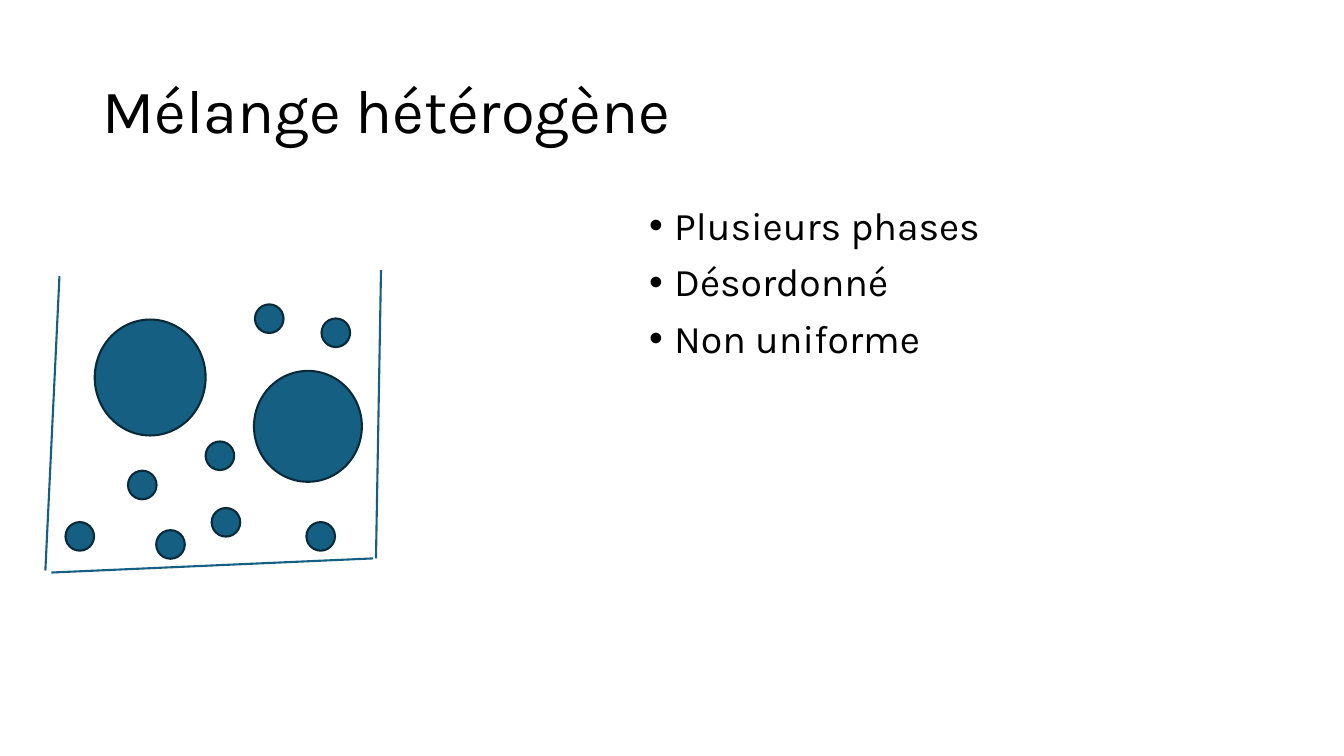
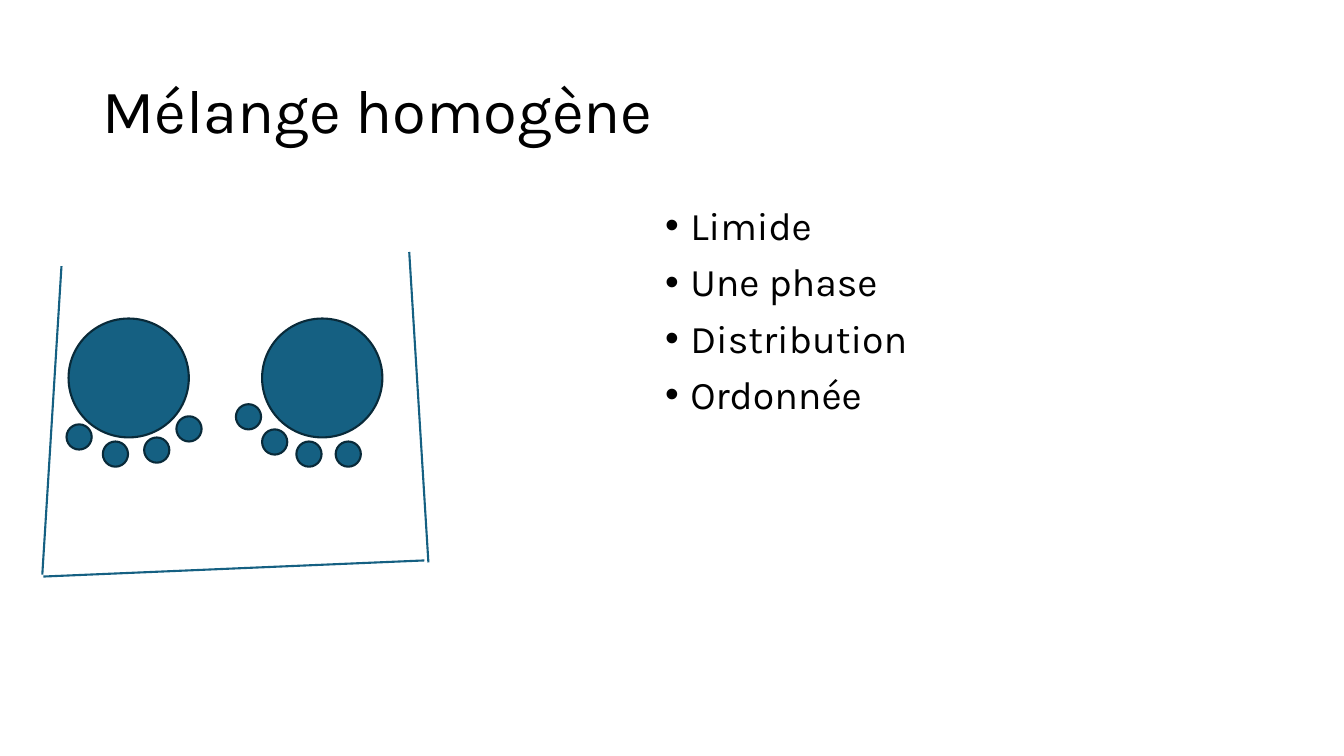
from lxml import etree
from pptx import Presentation
from pptx.dml.color import RGBColor
from pptx.enum.shapes import MSO_CONNECTOR, MSO_SHAPE
from pptx.enum.text import MSO_ANCHOR, MSO_AUTO_SIZE, PP_ALIGN
from pptx.oxml.ns import qn
from pptx.util import Inches, Pt

STRAIGHT = MSO_CONNECTOR.STRAIGHT
CIRCLE = MSO_SHAPE.FLOWCHART_CONNECTOR
LEFT = PP_ALIGN.LEFT
TOP, MIDDLE = MSO_ANCHOR.TOP, MSO_ANCHOR.MIDDLE
NO_AUTOFIT = MSO_AUTO_SIZE.NONE

# Grid of square cells, three to the inch
COLUMNS, ROWS = 40, 22.5
CELL = Inches(1) / 3
TITLE_ONLY = 5


def cells(count):
    return round(count * CELL)


def color(hex_value):
    return RGBColor.from_string(hex_value)


class Deck:
    """Shared style and the slide being filled."""

    font = "Karla"
    text_color = "000000"
    blue = "156082"
    outline = "092A39"
    line_width = Pt(1.5)
    title_area = (2.75, 1.2, 34.5, 4.35)
    body_top, body_right, body_height = 6, 37.25, 14.28

    def __init__(self):
        self.presentation = Presentation()
        self.presentation.slide_width = cells(COLUMNS)
        self.presentation.slide_height = cells(ROWS)
        self.slide = None

    def add_slide(self, title):
        layout = self.presentation.slide_layouts[TITLE_ONLY]
        self.slide = self.presentation.slides.add_slide(layout)
        shape = self.slide.shapes.title
        shape.left, shape.top, shape.width, shape.height = map(cells, self.title_area)
        frame = self.prepare_frame(shape, MIDDLE)
        self.add_text(frame.paragraphs[0], title, 44)

    def prepare_frame(self, shape, anchor):
        frame = shape.text_frame
        frame.word_wrap = True
        frame.auto_size = NO_AUTOFIT
        frame.vertical_anchor = anchor
        return frame

    def add_text(self, paragraph, text, size):
        paragraph.alignment = LEFT
        paragraph.line_spacing = 0.9
        run = paragraph.add_run()
        run.text = text
        run.font.name = self.font
        run.font.size = Pt(size)
        run.font.color.rgb = color(self.text_color)

    def add_bullets(self, left, items):
        area = (left, self.body_top, self.body_right - left, self.body_height)
        box = self.slide.shapes.add_textbox(*map(cells, area))
        frame = self.prepare_frame(box, TOP)
        for index, item in enumerate(items):
            paragraph = frame.add_paragraph() if index else frame.paragraphs[0]
            self.add_text(paragraph, item, 28)
            paragraph.space_before = Pt(10)
            # Hanging bullet
            properties = paragraph._p.get_or_add_pPr()
            properties.set("marL", str(Inches(0.25)))
            properties.set("indent", str(-Inches(0.25)))
            etree.SubElement(properties, qn("a:buFont"), typeface="Arial")
            etree.SubElement(properties, qn("a:buChar"), char="•")

    def add_line(self, start, end):
        points = map(cells, (*start, *end))
        line = self.slide.shapes.add_connector(STRAIGHT, *points)
        line.line.color.rgb = color(self.blue)
        line.line.width = self.line_width
        etree.SubElement(line._element.spPr, qn("a:effectLst"))

    def add_particle(self, left, top, width, height):
        area = map(cells, (left, top, width, height))
        particle = self.slide.shapes.add_shape(CIRCLE, *area)
        particle.shadow.inherit = False
        particle.fill.solid()
        particle.fill.fore_color.rgb = color(self.blue)
        particle.line.color.rgb = color(self.outline)
        particle.line.width = self.line_width

    def add_beaker(self, walls, large_particles, small_size, small_places):
        for start, end in walls:
            self.add_line(start, end)
        for area in large_particles:
            self.add_particle(*area)
        for left, top in small_places:
            self.add_particle(left, top, small_size, small_size)


def main():
    deck = Deck()

    # Heterogeneous mixture: scattered particles
    deck.add_slide("Mélange hétérogène")
    deck.add_bullets(19.02, ["Plusieurs phases", "Désordonné", "Non uniforme"])
    deck.add_beaker(
        walls=[((1.77, 8.22), (1.35, 16.98)),
               ((1.53, 17.04), (11.1, 16.62)),
               ((11.19, 16.62), (11.34, 8.04))],
        large_particles=[(2.82, 9.51, 3.3, 3.45), (7.56, 11.04, 3.21, 3.3)],
        small_size=0.85,
        small_places=[(3.81, 14.01), (9.12, 15.54), (6.3, 15.12), (7.59, 9.06),
                      (1.95, 15.54), (6.12, 13.14), (4.65, 15.78), (9.57, 9.48)],
    )

    # Homogeneous mixture: small particles gathered under the large ones
    deck.add_slide("Mélange homogène")
    deck.add_bullets(19.5, ["Limide", "Une phase", "Distribution", "Ordonnée"])
    deck.add_beaker(
        walls=[((1.83, 7.92), (1.26, 17.1)),
               ((1.29, 17.16), (12.63, 16.68)),
               ((12.75, 16.74), (12.18, 7.5))],
        large_particles=[(left, 9.48, 3.58, 3.54) for left in (2.04, 7.8)],
        small_size=0.75,
        small_places=[(1.98, 12.63), (3.06, 13.14), (4.29, 13.02), (5.25, 12.39),
                      (7.02, 12.03), (7.8, 12.78), (8.82, 13.14), (9.99, 13.14)],
    )

    deck.presentation.save("out.pptx")


if __name__ == "__main__":
    main()
